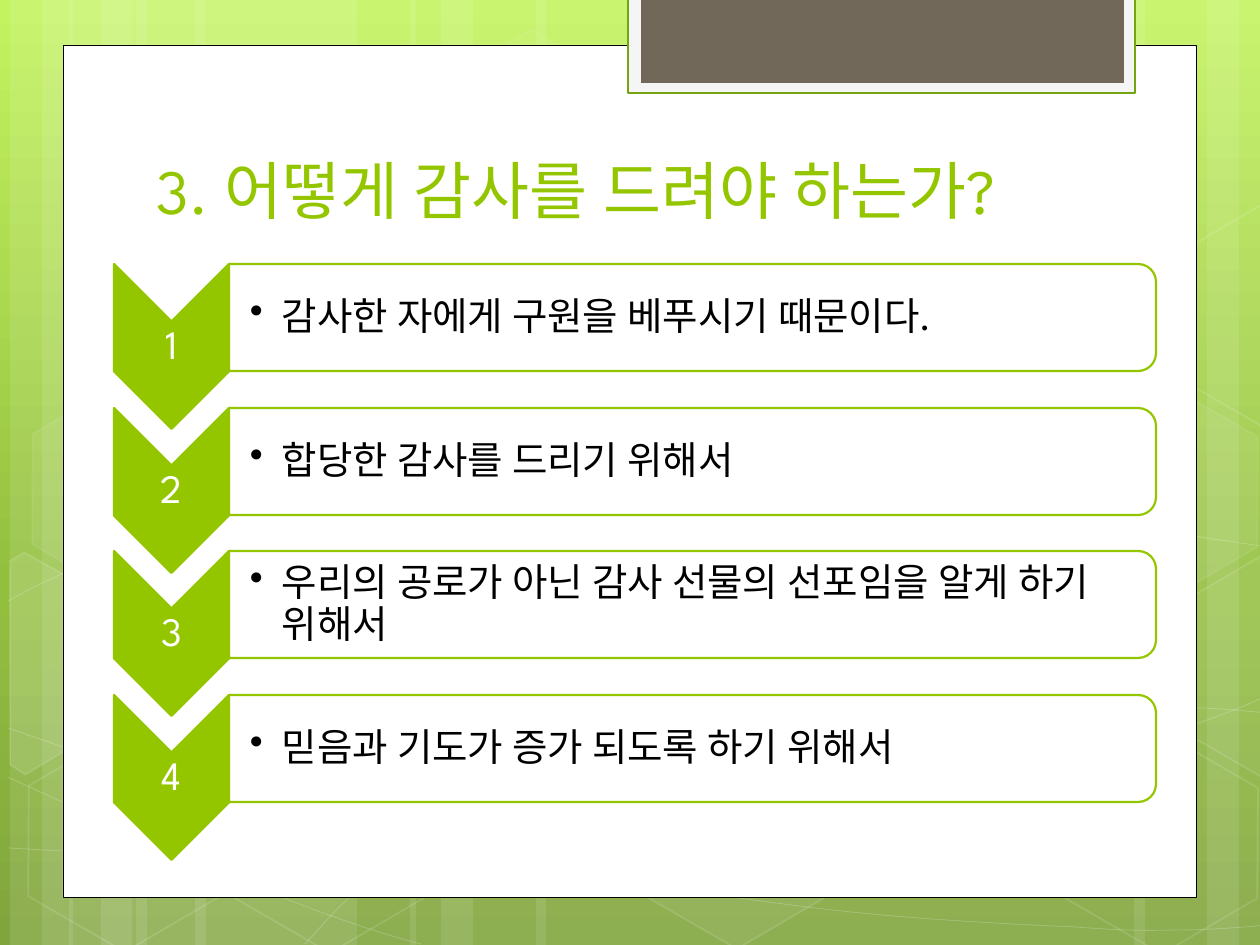
from copy import deepcopy

from lxml import etree
from pptx import Presentation
from pptx.dml.color import RGBColor
from pptx.enum.shapes import MSO_SHAPE
from pptx.enum.text import MSO_ANCHOR, MSO_AUTO_SIZE, PP_ALIGN
from pptx.oxml.ns import qn
from pptx.util import Emu, Pt

RECTANGLE = MSO_SHAPE.RECTANGLE
HEXAGON = MSO_SHAPE.HEXAGON
CHEVRON = MSO_SHAPE.CHEVRON
ROUND_TOP = MSO_SHAPE.ROUND_2_SAME_RECTANGLE

SCALE = 914400 / 126
PAGE_WIDTH, PAGE_HEIGHT = 1260, 945
FONT = "League Spartan"

WHITE = RGBColor(0xFF, 0xFF, 0xFF)
BLACK = RGBColor(0x00, 0x00, 0x00)
LIME = RGBColor(0x94, 0xC6, 0x00)
DARK_LIME = RGBColor(0x74, 0xA5, 0x10)
PALE_GREY = RGBColor(0xF5, 0xF5, 0xF5)
BROWN = RGBColor(0x71, 0x68, 0x5A)
BACKDROP = [
    (0, RGBColor(0xC3, 0xF3, 0x5F)),
    (0.62, RGBColor(0x93, 0xBF, 0x3F)),
    (1, RGBColor(0x81, 0xA5, 0x3E)),
]

# left, width
STRIPES = [
    (136, 221), (10, 63), (42, 105), (195, 221), (69, 63), (101, 105),
    (924, 221), (1207, 63), (1134, 105), (536, 388), (410, 63), (441, 105),
]
# start point, then for each Bezier segment two control points and an end point
WAVES = [
    [(8, 848), (77, 852), (145, 856), (239, 854), (334, 853), (451, 851), (577, 838),
     (703, 825), (882, 800), (998, 777), (1113, 753), (1231, 716), (1269, 694)],
    [(8, 601), (45, 581), (82, 562), (152, 543), (224, 524), (326, 496), (437, 488),
     (549, 479), (685, 478), (824, 488), (963, 498), (1193, 537), (1269, 547)],
    [(8, 777), (160, 847), (311, 916), (421, 944)],
    [(8, 728), (48, 742), (88, 756), (161, 776), (234, 795), (344, 827), (450, 848),
     (554, 869), (687, 892), (791, 905), (896, 919), (1008, 924), (1075, 927),
     (1140, 932), (1158, 930), (1191, 930), (1223, 929), (1246, 927), (1269, 925)],
    [(305, 944), (328, 919), (350, 893), (381, 871), (411, 848), (454, 823), (489, 805),
     (524, 788), (546, 780), (592, 767), (638, 755), (722, 737), (766, 728),
     (811, 720), (818, 719), (857, 717), (896, 713), (958, 709), (1000, 708),
     (1045, 707), (1116, 708), (1116, 708), (1144, 708), (1173, 708), (1201, 708),
     (1223, 709), (1245, 711), (1256, 712), (1268, 713), (1264, 712), (1268, 713)],
]
# left, top, fill opacity, line opacity
HEXAGONS = [
    (421, 45, 4, 8), (626, 742, 6, 12), (14, 745, 0, 12), (18, 393, 7, 8),
    (219, 746, 0, 12), (949, 571, 10, 12), (1051, 747, 0, 12), (1051, 396, 7, 8),
]
HEXAGON_TURN = 30
# corners before the turn, fill opacity
CUT_HEXAGONS = [
    ([(-42, 594), (-34, 579), (77, 578), (132, 674), (78, 771), (60, 770)], 10),
    ([(1155, 654), (1209, 559), (1220, 559), (1326, 741), (1321, 750), (1210, 750)], 4),
    ([(1155, 303), (1209, 208), (1220, 208), (1326, 390), (1321, 399), (1210, 399)], 0),
]

TITLE = "3. 어떻게 감사를 드려야 하는가?"
REASONS = [
    "감사한 자에게 구원을 베푸시기 때문이다.",
    "합당한 감사를 드리기 위해서",
    "우리의 공로가 아닌 감사 선물의 선포임을 알게 하기 위해서",
    "믿음과 기도가 증가 되도록 하기 위해서",
]
FIRST_ROW_TOP, ROWS_SPAN = 264, 431


def px(length):
    return Emu(round(length * SCALE))


def set_opacity(solid_fill, percent):
    etree.SubElement(solid_fill[0], qn("a:alpha"), val=str(percent * 1000))


def paint(shape, fill=None, line=None, weight=1, fill_opacity=100, line_opacity=100):
    shape.shadow.inherit = False
    properties = shape._element.spPr
    if fill is None or fill_opacity == 0:
        shape.fill.background()
    else:
        shape.fill.solid()
        shape.fill.fore_color.rgb = fill
        if fill_opacity < 100:
            set_opacity(properties.find(qn("a:solidFill")), fill_opacity)
    if line is None:
        shape.line.fill.background()
    else:
        shape.line.color.rgb = line
        shape.line.width = Pt(weight)
        if line_opacity < 100:
            set_opacity(properties.find(qn("a:ln")).find(qn("a:solidFill")), line_opacity)


def add_box(page, kind, left, top, width, height, **look):
    box = page.shapes.add_shape(kind, px(left), px(top), px(width), px(height))
    paint(box, **look)
    return box


def add_turned_box(page, kind, left, top, width, height, **look):
    """Add a shape turned by 90 degrees; the box is the area it covers once turned."""
    shift = (width - height) / 2
    box = add_box(page, kind, left + shift, top - shift, height, width, **look)
    box.rotation = 90


def add_outline(page, points, closed, **look):
    builder = page.shapes.build_freeform(*points[0], scale=SCALE)
    builder.add_line_segments(points[1:], close=closed)
    outline = builder.convert_to_shape()
    paint(outline, **look)
    return outline


def bend(outline):
    """Turn each three straight segments into one cubic Bezier segment."""
    segments = list(outline._element.iter(qn("a:lnTo")))
    for first, second, third in zip(*[iter(segments)] * 3):
        first.tag = qn("a:cubicBezTo")
        for segment in (second, third):
            first.append(segment[0])
            segment.getparent().remove(segment)


def write(frame, text, size, color, anchor):
    frame.text = text
    frame.word_wrap = True
    frame.auto_size = MSO_AUTO_SIZE.NONE
    frame.vertical_anchor = anchor
    para = frame.paragraphs[0]
    font = para.runs[0].font
    font.name, font.size, font.color.rgb = FONT, Pt(size), color
    etree.SubElement(font._element, qn("a:ea"), typeface=FONT)
    return para


def add_label(page, text, left, top, width, height, size, color, inset=3):
    box = page.shapes.add_textbox(px(left), px(top), px(width), px(height))
    frame = box.text_frame
    frame.margin_left = px(inset)
    frame.margin_top = frame.margin_right = frame.margin_bottom = px(3)
    para = write(frame, text, size, color, MSO_ANCHOR.MIDDLE)
    para.line_spacing = 0.9
    return para


def add_bullet(para, indent):
    properties = para._p.get_or_add_pPr()
    properties.set("marL", str(px(indent)))
    properties.set("indent", str(-px(indent)))
    etree.SubElement(properties, qn("a:buChar"), char="•")


def fill_background(page):
    fill = page.background.fill
    fill.gradient()
    fill.gradient_angle = 270
    stop_list = page._element.find(".//" + qn("a:gsLst"))
    stop_list.insert(1, deepcopy(stop_list[0]))
    for stop, (position, color) in zip(fill.gradient_stops, BACKDROP):
        stop.position = position
        stop.color.rgb = color


def add_backdrop(page):
    fill_background(page)
    for left, width in STRIPES:
        add_box(page, RECTANGLE, left, 0, width, PAGE_HEIGHT, fill=WHITE, fill_opacity=10)
    for points in WAVES:
        bend(add_outline(page, points, False, line=WHITE, weight=0.5, line_opacity=20))
    for left, top, fill_opacity, line_opacity in HEXAGONS:
        hexagon = add_box(page, HEXAGON, left, top, 221, 192, fill=WHITE, line=WHITE,
                          fill_opacity=fill_opacity, line_opacity=line_opacity)
        hexagon.adjustments[0] = 0.285
        hexagon.rotation = HEXAGON_TURN
    for corners, opacity in CUT_HEXAGONS:
        cut_hexagon = add_outline(page, corners, True, fill=WHITE, line=WHITE,
                                  fill_opacity=opacity, line_opacity=12)
        cut_hexagon.rotation = HEXAGON_TURN


def add_panel(page):
    add_box(page, RECTANGLE, 63, 45, 1134, 853, fill=WHITE, line=BLACK, weight=0.5)
    add_box(page, RECTANGLE, 628, -2, 507, 95, fill=PALE_GREY, line=DARK_LIME, weight=1.25)
    add_box(page, RECTANGLE, 641, -2, 483, 85, fill=BROWN)


def place_title(page):
    title = page.shapes.title
    page.shapes._spTree.append(title._element)
    title.left, title.top, title.width, title.height = px(144), px(76), px(968), px(157)
    para = write(title.text_frame, TITLE, 36, LIME, MSO_ANCHOR.BOTTOM)
    para.alignment = PP_ALIGN.LEFT


def add_reason(page, number, reason, top):
    add_turned_box(page, CHEVRON, 114, top, 115, 165, fill=LIME, line=LIME, weight=1.25)
    label = add_label(page, str(number), 114, top + 58, 115, 49, 23, WHITE)
    label.alignment = PP_ALIGN.CENTER
    add_turned_box(page, ROUND_TOP, 229, top, 927, 107, fill=WHITE, line=LIME,
                   weight=1.25, fill_opacity=90)
    para = add_label(page, reason, 229, top + 6, 922, 96, 22, BLACK, inset=21)
    para.level = 1
    add_bullet(para, 32)


def main():
    deck = Presentation()
    deck.slide_width, deck.slide_height = px(PAGE_WIDTH), px(PAGE_HEIGHT)
    page = deck.slides.add_slide(deck.slide_layouts[5])
    add_backdrop(page)
    add_panel(page)
    place_title(page)
    for index, reason in enumerate(REASONS):
        top = FIRST_ROW_TOP + round(ROWS_SPAN * index / (len(REASONS) - 1))
        add_reason(page, index + 1, reason, top)
    deck.save("out.pptx")


if __name__ == "__main__":
    main()
